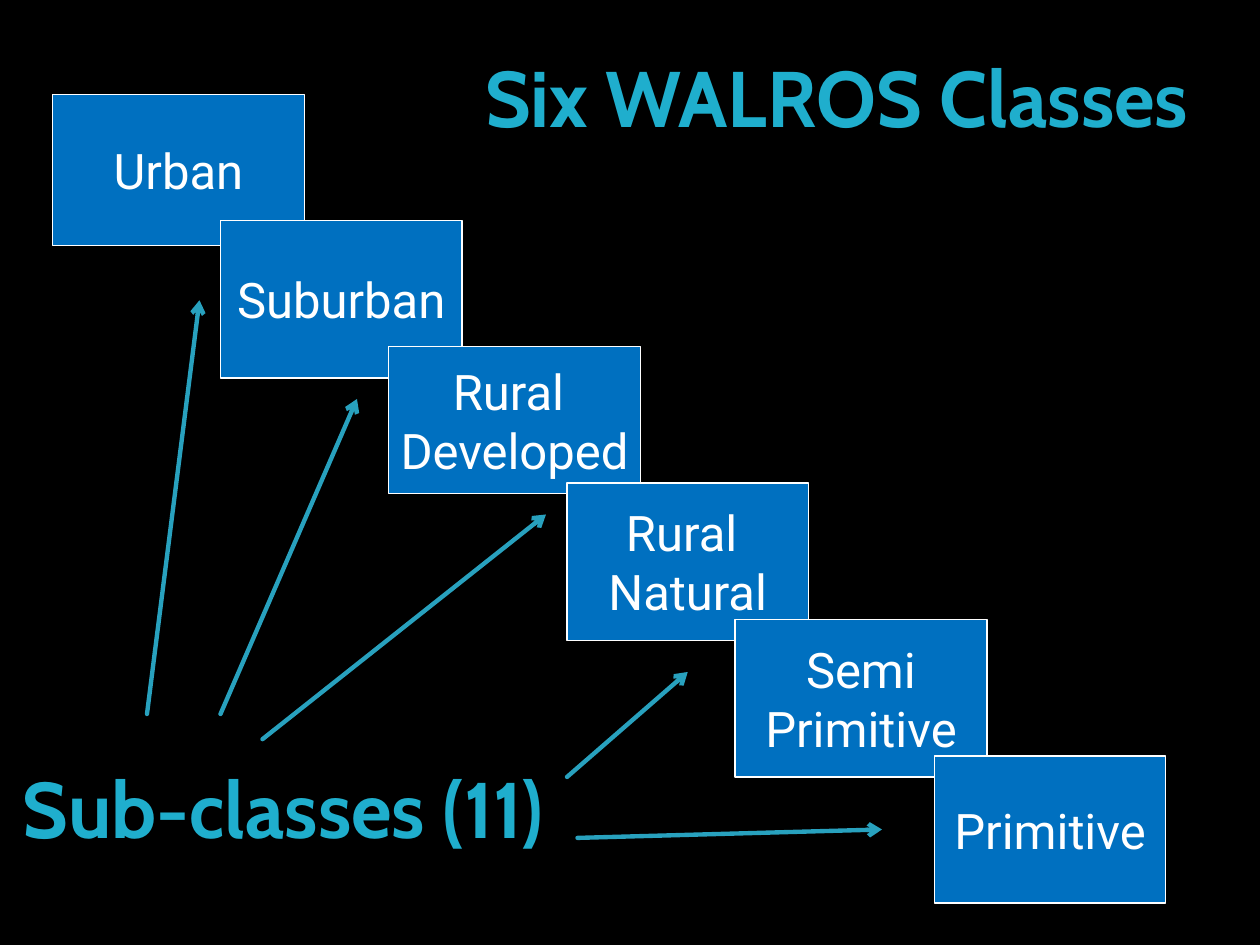
from dataclasses import dataclass
from typing import Any

from lxml.etree import SubElement
from pptx import Presentation
from pptx.dml.color import RGBColor
from pptx.enum.shapes import MSO_CONNECTOR, MSO_SHAPE
from pptx.enum.text import MSO_ANCHOR, MSO_AUTO_SIZE, PP_ALIGN
from pptx.oxml.ns import qn
from pptx.util import Pt


def color(hex_string):
    return RGBColor.from_string(hex_string)


@dataclass
class ClassSlide:
    page: Any
    background: str = "000000"
    box_fill: str = "0070C0"
    box_text: str = "FFFFFF"
    heading_color: str = "1FAECD"
    arrow_color: str = "28A1BE"
    heading_font: str = "Cabin"
    body_font: str = "Roboto"

    def paint_background(self):
        fill = self.page.background.fill
        fill.solid()
        fill.fore_color.rgb = color(self.background)

    def set_text(self, para, text, font_name, size, hex_string, align, bold=False):
        para.text = text
        para.alignment = align
        font = para.font
        font.name, font.size, font.bold = font_name, Pt(size), bold
        font.color.rgb = color(hex_string)

    def format_heading(self, shape, text):
        frame = shape.text_frame
        frame.word_wrap = True
        frame.auto_size = MSO_AUTO_SIZE.SHAPE_TO_FIT_TEXT
        frame.vertical_anchor = MSO_ANCHOR.TOP
        self.set_text(frame.paragraphs[0], text, self.heading_font, 45,
                      self.heading_color, PP_ALIGN.LEFT, bold=True)

    def title(self, text, left, top, width, height):
        shape = self.page.shapes.title
        shape.left, shape.top = Pt(left), Pt(top)
        shape.width, shape.height = Pt(width), Pt(height)
        self.format_heading(shape, text)

    def label(self, text, left, top, width, height):
        shape = self.page.shapes.add_textbox(Pt(left), Pt(top), Pt(width), Pt(height))
        self.format_heading(shape, text)

    def class_box(self, lines, left, top, width, height):
        box = self.page.shapes.add_shape(
            MSO_SHAPE.RECTANGLE, Pt(left), Pt(top), Pt(width), Pt(height))
        box.shadow.inherit = False
        box.fill.solid()
        box.fill.fore_color.rgb = color(self.box_fill)
        box.line.color.rgb = color(self.box_text)
        box.line.width = Pt(0.75)
        frame = box.text_frame
        frame.word_wrap = False
        frame.vertical_anchor = MSO_ANCHOR.MIDDLE
        for index, text in enumerate(lines):
            para = frame.add_paragraph() if index else frame.paragraphs[0]
            self.set_text(para, text, self.body_font, 28, self.box_text, PP_ALIGN.CENTER)

    def arrow(self, start, end):
        connector = self.page.shapes.add_connector(
            MSO_CONNECTOR.STRAIGHT, *map(Pt, start + end))
        connector.line.color.rgb = color(self.arrow_color)
        connector.line.width = Pt(2.5)
        properties = connector.element.spPr
        outline = properties.find(qn("a:ln"))
        outline.set("cap", "rnd")
        SubElement(outline, qn("a:round"))
        SubElement(outline, qn("a:tailEnd"), type="arrow")
        SubElement(properties, qn("a:effectLst"))


CLASS_BOXES = [
    (["Urban"], 30, 54, 144, 86.4),
    (["Suburban"], 126, 126, 138, 90),
    (["Rural ", "Developed"], 222, 198, 144, 84),
    (["Rural ", "Natural"], 324, 276, 138, 90),
    (["Semi", "Primitive"], 420, 354, 144, 90),
    (["Primitive"], 534, 432, 132, 84),
]

ARROWS = [
    ((84, 408), (114, 171.6)),
    ((150, 422.4), (312, 294)),
    ((324, 444), (393, 384)),
    ((330, 478.8), (504, 474)),
    ((126, 408), (204, 228)),
]


def main():
    deck = Presentation()
    deck.slide_width, deck.slide_height = Pt(720), Pt(540)
    slide = ClassSlide(deck.slides.add_slide(deck.slide_layouts[5]))
    slide.paint_background()
    slide.title("Six WALROS Classes", 270, 24, 420, 62)
    for class_box in CLASS_BOXES:
        slide.class_box(*class_box)
    slide.label("Sub-classes (11)", 6, 430.5, 324, 62)
    for start, end in ARROWS:
        slide.arrow(start, end)
    deck.save("out.pptx")


if __name__ == "__main__":
    main()
